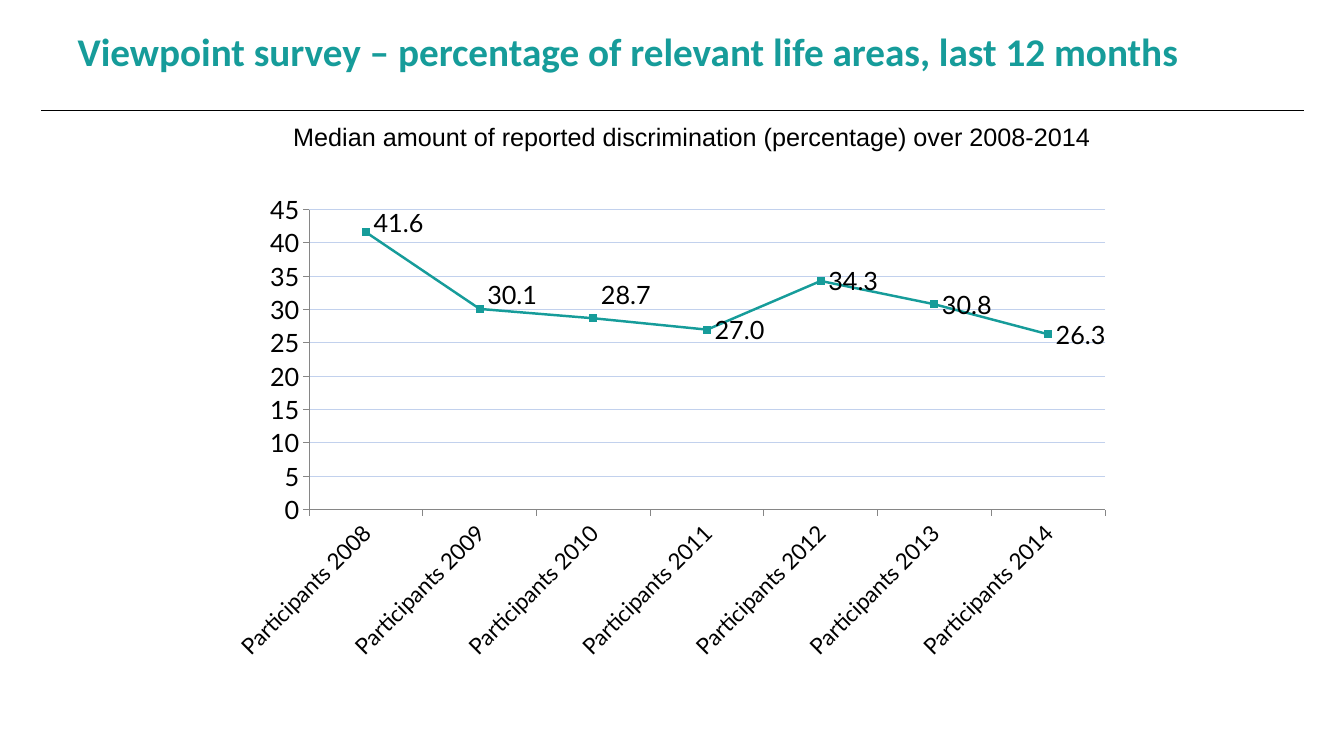
from lxml import etree
from pptx import Presentation
from pptx.chart.data import CategoryChartData
from pptx.dml.color import RGBColor
from pptx.enum.chart import XL_CHART_TYPE, XL_LABEL_POSITION, XL_MARKER_STYLE, XL_TICK_MARK
from pptx.enum.shapes import MSO_CONNECTOR
from pptx.enum.text import MSO_ANCHOR, PP_ALIGN
from pptx.oxml import parse_xml
from pptx.oxml.ns import nsdecls, qn
from pptx.util import Inches, Pt

COLORS = {"teal": "169C9A", "black": "000000", "grid": "C2D1ED", "axis": "868686"}
MEDIANS = {2008: 41.6, 2009: 30.1, 2010: 28.7, 2011: 27.0,
           2012: 34.3, 2013: 30.8, 2014: 26.3}
LABEL_RISES = {0: 0.02, 1: 0.03, 2: 0.05}
PLOT_LAYOUT = {"x": 0.1, "y": 0.05, "w": 0.88, "h": 0.62}


def color(name):
    return RGBColor.from_string(COLORS[name])


def style_font(font, name, size, color_name, bold=False):
    font.name = name
    font.size = Pt(size)
    font.bold = bold
    font.color.rgb = color(color_name)


def style_line(line, color_name, width):
    line.color.rgb = color(color_name)
    line.width = Pt(width)


def place(shape, left, top, width, height):
    shape.left, shape.top = Inches(left), Inches(top)
    shape.width, shape.height = Inches(width), Inches(height)


def fill_text(frame, text, *font_settings):
    frame.word_wrap = True
    frame.vertical_anchor = MSO_ANCHOR.TOP
    frame.text = text
    para = frame.paragraphs[0]
    para.alignment = PP_ALIGN.LEFT
    style_font(para.runs[0].font, *font_settings)
    return para


def add_title(page, text):
    title = page.shapes.title
    place(title, 0.67, 0.27, 11.65, 1.24)
    para = fill_text(title.text_frame, text, "Calibri", 28, "teal", True)
    para.line_spacing = 0.9


def add_rule(page):
    rule = page.shapes.add_connector(
        MSO_CONNECTOR.STRAIGHT, Inches(0.41), Inches(1.09), Inches(12.93), Inches(1.09))
    style_line(rule.line, "black", 0.25)
    etree.SubElement(rule._element.spPr, qn("a:effectLst"))


def add_caption(page, text):
    box = page.shapes.add_textbox(Inches(2.81), Inches(1.15), Inches(8.76), Inches(0.4))
    fill_text(box.text_frame, text, "Arial", 18, "black")


def manual_layout(settings, inner=False):
    target = '<c:layoutTarget val="inner"/>' if inner else ""
    modes = "".join(f'<c:{key}Mode val="edge"/>' for key in "xy") if inner else ""
    values = "".join(f'<c:{key} val="{value}"/>' for key, value in settings.items())
    return parse_xml(f'<c:layout {nsdecls("c")}><c:manualLayout>{target}{modes}{values}'
                     '</c:manualLayout></c:layout>')


def style_axis(axis, size):
    style_font(axis.tick_labels.font, "Lato", size, "black")
    style_line(axis.format.line, "axis", 0.75)
    axis.major_tick_mark = XL_TICK_MARK.OUTSIDE
    axis.minor_tick_mark = XL_TICK_MARK.NONE


def style_axes(chart):
    years, percent = chart.category_axis, chart.value_axis
    style_axis(years, 16)
    years._element.txPr.find(qn("a:bodyPr")).set("rot", "-2700000")
    style_axis(percent, 18)
    percent.minimum_scale, percent.maximum_scale, percent.major_unit = 0, 45, 5
    percent.tick_labels.number_format = "0"
    percent.tick_labels.number_format_is_linked = False
    percent.has_major_gridlines = True
    style_line(percent.major_gridlines.format.line, "grid", 0.75)


def style_series(series):
    series.smooth = False
    style_line(series.format.line, "teal", 1.75)
    series.marker.style = XL_MARKER_STYLE.SQUARE
    series.marker.size = 5
    series.marker.format.fill.solid()
    series.marker.format.fill.fore_color.rgb = color("teal")
    series.marker.format.line.color.rgb = color("teal")
    labels = series.data_labels
    labels.show_value = True
    labels.number_format = "0.0"
    labels.number_format_is_linked = False
    labels.position = XL_LABEL_POSITION.RIGHT
    style_font(labels.font, "Lato", 18, "black")
    for index, rise in LABEL_RISES.items():
        label = series.points[index].data_label
        label.position = XL_LABEL_POSITION.RIGHT
        style_font(label.font, "Lato", 18, "black")
        entry = labels._element.findall(qn("c:dLbl"))[index]
        entry.find(qn("c:idx")).addnext(manual_layout({"x": 0, "y": -rise}))


def add_median_chart(page):
    data = CategoryChartData(number_format="0.0")
    data.categories = [f"Participants {year}" for year in MEDIANS]
    data.add_series("Series 1", MEDIANS.values())
    chart = page.shapes.add_chart(
        XL_CHART_TYPE.LINE_MARKERS, Inches(2.17), Inches(1.84),
        Inches(8.97), Inches(4.8), data).chart
    chart.has_legend = False
    chart.has_title = False
    style_font(chart.font, "Lato", 10, "black")
    plot = chart.plots[0]
    plot.vary_by_categories = False
    area = chart._chartSpace.chart.plotArea
    for layout in area.findall(qn("c:layout")):
        area.remove(layout)
    area.insert(0, manual_layout(PLOT_LAYOUT, inner=True))
    style_axes(chart)
    style_series(plot.series[0])


def main():
    deck = Presentation()
    deck.slide_width, deck.slide_height = Inches(13.33), Inches(7.5)
    page = deck.slides.add_slide(deck.slide_layouts[5])
    add_rule(page)
    add_title(page, "Viewpoint survey – percentage of relevant life areas, last 12 months")
    add_median_chart(page)
    add_caption(page, "Median amount of reported discrimination (percentage) over 2008-2014")
    deck.save("out.pptx")


if __name__ == "__main__":
    main()
